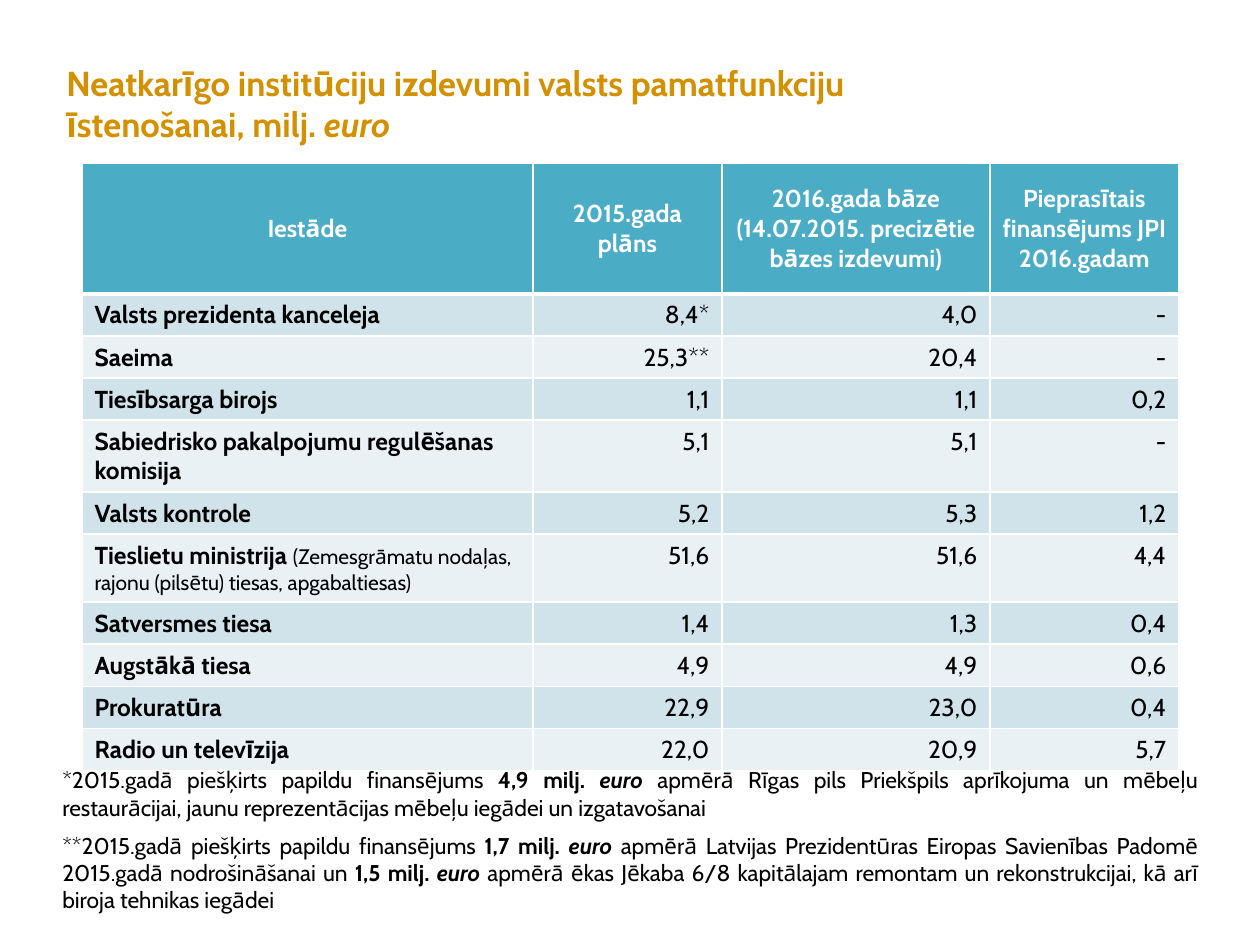
from lxml import etree
from pptx import Presentation
from pptx import util as u
from pptx.dml.color import RGBColor
from pptx.enum import text
from pptx.oxml.ns import qn

PX = 914400 // 126
FONT = "Cabin"
LEFT, MID, RIGHT, JUST = (text.PP_ALIGN.LEFT, text.PP_ALIGN.CENTER,
                          text.PP_ALIGN.RIGHT, text.PP_ALIGN.JUSTIFY)


def color(code):
    return RGBColor.from_string(code)


def write(para, runs, size, align, code="000000", bold=False):
    """Fill a paragraph; each run is (text, marks), b bold, i italic, s small."""
    para.alignment = align
    font = para.font
    font.name, font.size, font.bold = FONT, u.Pt(size), bold
    font.color.rgb = color(code)
    for words, marks in runs:
        run = para.add_run()
        run.text = words
        if "b" in marks:
            run.font.bold = True
        if "i" in marks:
            run.font.italic = True
        if "s" in marks:
            run.font.size, run.font.bold = u.Pt(12), False


prs = Presentation()
prs.slide_width, prs.slide_height = u.Inches(10), u.Inches(7.5)
slide = prs.slides.add_slide(prs.slide_layouts[6])

# Title
box = slide.shapes.add_textbox(54 * PX, 73 * PX, 814 * PX, 60 * PX)
frame = box.text_frame
frame.word_wrap = True
frame.vertical_anchor = text.MSO_ANCHOR.MIDDLE
title = [("Neatkarīgo institūciju izdevumi valsts pamatfunkciju īstenošanai, milj. ", ""),
         ("euro", "i")]
write(frame.paragraphs[0], title, 19.8, LEFT, "D39001", True)

# Spending table
heads = ["Iestāde", "2015.gada plāns",
         "2016.gada bāze (14.07.2015. precizētie bāzes izdevumi)",
         "Pieprasītais finansējums JPI\n2016.gadam"]
rows = [
    ("Valsts prezidenta kanceleja", "8,4*", "4,0", "-"),
    ("Saeima", "25,3**", "20,4", "-"),
    ("Tiesībsarga birojs", "1,1", "1,1", "0,2"),
    ("Sabiedrisko pakalpojumu regulēšanas komisija", "5,1", "5,1", "-"),
    ("Valsts kontrole", "5,2", "5,3", "1,2"),
    ("Tieslietu ministrija ", "51,6", "51,6", "4,4"),
    ("Satversmes tiesa", "1,4", "1,3", "0,4"),
    ("Augstākā tiesa", "4,9", "4,9", "0,6"),
    ("Prokuratūra", "22,9", "23,0", "0,4"),
    ("Radio un televīzija", "22,0", "20,9", "5,7"),
]
notes = {"Tieslietu ministrija ":
         "(Zemesgrāmatu nodaļas, rajonu (pilsētu) tiesas, apgabaltiesas)"}
widths = [451, 189, 268, 189]
heights = [131, 42, 42, 42, 72, 42, 68, 42, 42, 42, 42]

grid = slide.shapes.add_table(len(heights), len(widths), 82 * PX, 163 * PX,
                              sum(widths) * PX, sum(heights) * PX).table
grid.first_row = grid.horz_banding = False
for col, width in zip(grid.columns, widths):
    col.width = width * PX
for row, height in zip(grid.rows, heights):
    row.height = height * PX

for r, row in enumerate([heads] + rows):
    for c, words in enumerate(row):
        cell = grid.cell(r, c)
        frame = cell.text_frame
        if r == 0:
            cell.vertical_anchor = text.MSO_ANCHOR.MIDDLE
            for n, line in enumerate(words.split("\n")):
                para = frame.add_paragraph() if n else frame.paragraphs[0]
                write(para, [(line, "")], 14, MID, "FFFFFF", True)
        else:
            runs = [(words, "")]
            if words in notes:
                runs.append((notes[words], "s"))
            write(frame.paragraphs[0], runs, 14, RIGHT if c else LEFT, bold=c == 0)
        props = cell._tc.get_or_add_tcPr()
        for side in ("lnL", "lnR", "lnT", "lnB"):
            thick = (r, side) in ((0, "lnB"), (1, "lnT"))
            line = etree.SubElement(props, qn("a:" + side), w=str(u.Pt(3 if thick else 1)))
            fill = etree.SubElement(line, qn("a:solidFill"))
            etree.SubElement(fill, qn("a:srgbClr"), val="FFFFFF")
        cell.fill.solid()
        shade = "4BACC6" if r == 0 else "D0E3EA" if r % 2 else "E9F1F5"
        cell.fill.fore_color.rgb = color(shade)

# Footnotes
foots = [
    [("*2015.gadā piešķirts papildu finansējums ", ""), ("4,9 milj. ", "b"), ("euro ", "bi"),
     ("apmērā Rīgas pils Priekšpils aprīkojuma un mēbeļu restaurācijai, "
      "jaunu reprezentācijas mēbeļu iegādei un izgatavošanai", "")],
    [("**2015.gadā piešķirts papildu finansējums ", ""), ("1,7 milj. ", "b"), ("euro ", "bi"),
     ("apmērā Latvijas Prezidentūras Eiropas Savienības Padomē "
      "2015.gadā nodrošināšanai un ", ""),
     ("1,5 milj. ", "b"), ("euro ", "bi"),
     ("apmērā ēkas Jēkaba 6/8 kapitālajam remontam un rekonstrukcijai, "
      "kā arī biroja tehnikas iegādei", "")],
]
box = slide.shapes.add_textbox(50 * PX, 760 * PX, 1160 * PX, 161 * PX)
frame = box.text_frame
frame.word_wrap = True
frame.auto_size = text.MSO_AUTO_SIZE.SHAPE_TO_FIT_TEXT
for n, runs in enumerate(foots):
    para = frame.add_paragraph() if n else frame.paragraphs[0]
    write(para, runs, 13, JUST)
frame.paragraphs[0].space_after = u.Pt(6)

prs.save("out.pptx")
